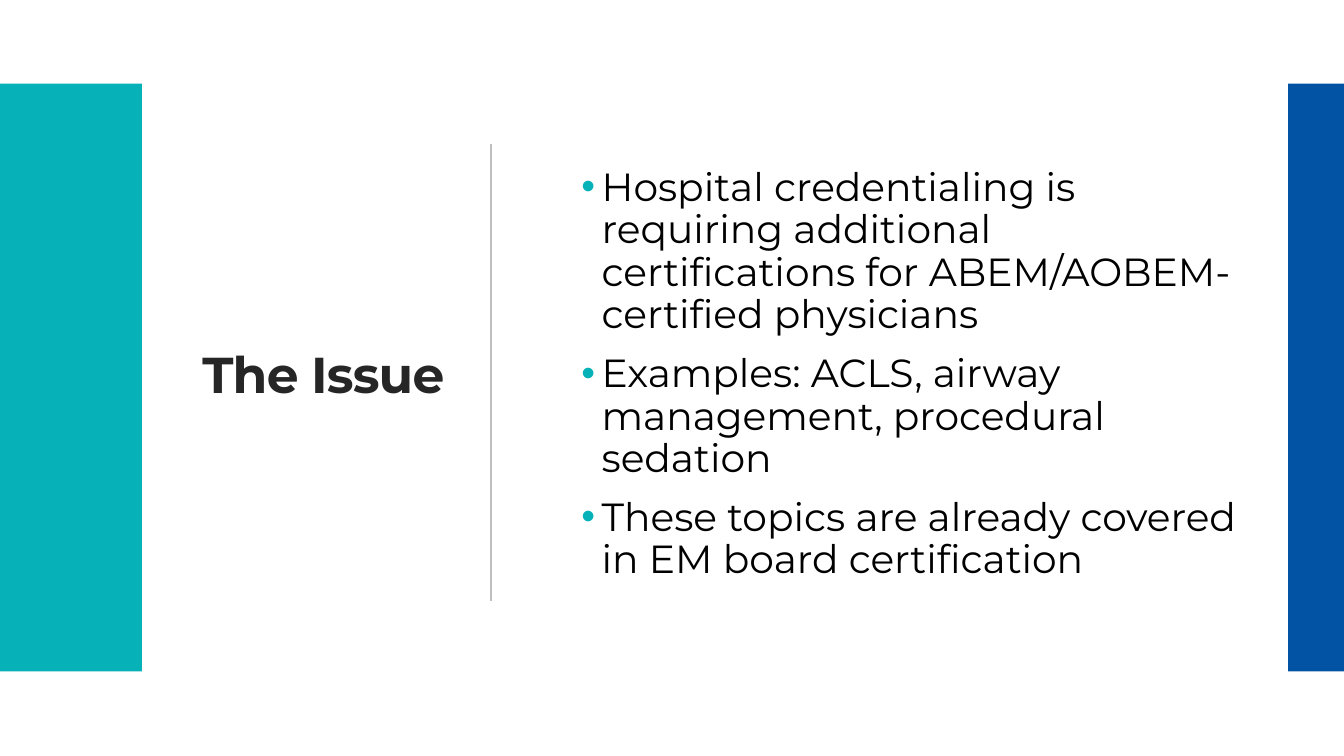
from lxml.etree import SubElement
from pptx import Presentation
from pptx.dml.color import RGBColor
from pptx.enum.shapes import MSO_CONNECTOR, MSO_SHAPE
from pptx.enum.text import MSO_ANCHOR, MSO_AUTO_SIZE, PP_ALIGN
from pptx.oxml.ns import qn
from pptx.util import Cm, Pt

TEAL, BLUE = "07B1B8", "0253A3"
ISSUES = [
    "Hospital credentialing is requiring additional certifications for ABEM/AOBEM-certified physicians",
    "Examples: ACLS, airway management, procedural sedation",
    "These topics are already covered in EM board certification",
]


def rgb(value):
    return RGBColor.from_string(value)


def prepare_placeholder(box, left, top, width, height):
    """Move a placeholder and centre its text vertically at a fixed size."""
    box.left, box.top, box.width, box.height = Cm(left), Cm(top), Cm(width), Cm(height)
    frame = box.text_frame
    frame.word_wrap = True
    frame.auto_size = MSO_AUTO_SIZE.NONE
    frame.vertical_anchor = MSO_ANCHOR.MIDDLE
    return frame


deck = Presentation()
deck.slide_width, deck.slide_height = Cm(33.87), Cm(19.05)
page = deck.slides.add_slide(deck.slide_layouts[1])

# Side bars
for left, width, color in [(0, 3.58, TEAL), (32.46, 1.41, BLUE)]:
    bar = page.shapes.add_shape(MSO_SHAPE.RECTANGLE, Cm(left), Cm(2.11), Cm(width), Cm(14.81))
    bar.shadow.inherit = False
    bar.fill.solid()
    bar.fill.fore_color.rgb = rgb(color)
    bar.line.fill.background()

# Divider between title and list
divider = page.shapes.add_connector(MSO_CONNECTOR.STRAIGHT, Cm(12.37), Cm(3.63), Cm(12.37), Cm(15.14))
divider.line.color.rgb = rgb("BFBFBF")
divider.line.width = Pt(1)
SubElement(divider._element.spPr, qn("a:effectLst"))

# Title
title_frame = prepare_placeholder(page.shapes.title, 2.92, 2.39, 8.53, 14.22)
title = title_frame.paragraphs[0]
title.alignment = PP_ALIGN.RIGHT
title.line_spacing = 0.9
span = title.add_run()
span.text = "The Issue"
span.font.name = "Montserrat"
span.font.size = Pt(36)
span.font.bold = True
span.font.color.rgb = rgb("262626")
span._r.get_or_add_rPr().set("spc", "-60")

# Bulleted list
list_frame = prepare_placeholder(page.placeholders[1], 14.4, 2.67, 17.42, 14.22)
list_frame.margin_bottom = Cm(0.79)
for index, issue in enumerate(ISSUES):
    para = list_frame.paragraphs[0] if index == 0 else list_frame.add_paragraph()
    para.text = issue
    para.alignment = PP_ALIGN.LEFT
    para.line_spacing = 0.9
    para.space_before = Pt(12 if index else 0)
    properties = para._p.get_or_add_pPr()
    properties.set("marL", str(Cm(0.51)))
    properties.set("indent", str(Cm(-0.51)))
    bullet_color = SubElement(properties, qn("a:buClr"))
    SubElement(bullet_color, qn("a:srgbClr"), val=TEAL)
    SubElement(properties, qn("a:buFont"), typeface="Arial")
    SubElement(properties, qn("a:buChar"), char="•")
    para.font.name = "Montserrat"
    para.font.size = Pt(28)
    para.font.color.rgb = rgb("000000")

deck.save("out.pptx")
